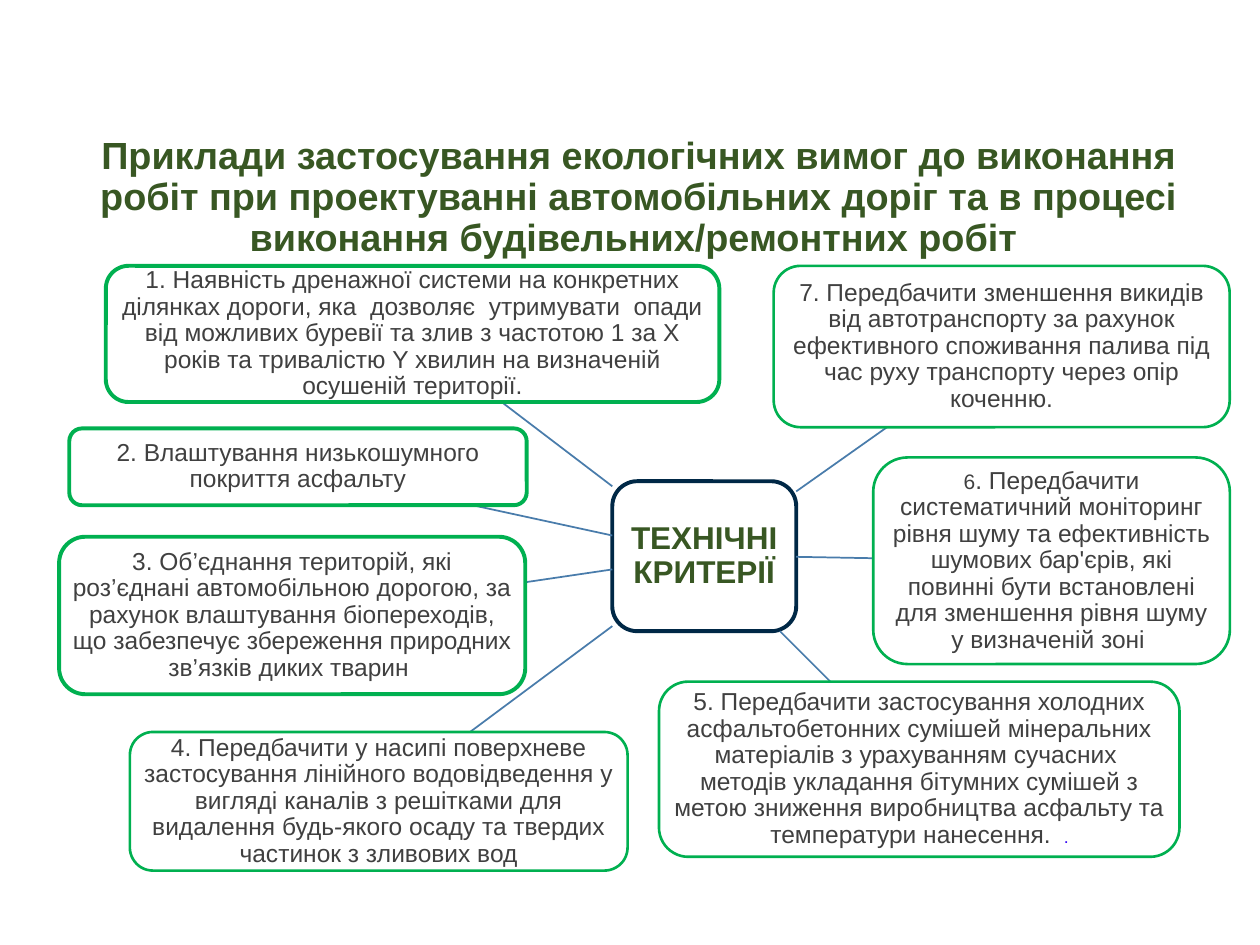
from lxml import etree
from pptx import Presentation
from pptx import util as u
from pptx.dml.color import RGBColor
from pptx.enum import shapes, text
from pptx.oxml.ns import qn

FONT = "Arial"
WHITE = RGBColor(0xFF, 0xFF, 0xFF)
DARK_GREEN = RGBColor(0x38, 0x57, 0x23)
GREEN = RGBColor(0x00, 0xB0, 0x50)
NAVY = RGBColor(0x00, 0x28, 0x46)
BLUE = RGBColor(0x49, 0x7C, 0xAB)
GREY = RGBColor(0x40, 0x40, 0x40)
VIOLET = RGBColor(0x38, 0x0C, 0xF4)

TITLE = ("Приклади застосування екологічних вимог до виконання робіт при "
         "проектуванні автомобільних доріг та в процесі виконання "
         "будівельних/ремонтних робіт ")

# Each criterion: (left, top, width, height), line width, text runs with format
CRITERIA = [
    ((60.5, 151.9, 350.6, 77.8), 2.25, [
        ("1. Наявність дренажної системи на конкретних ділянках дороги, яка  "
         "дозволяє  утримувати  опади від можливих буревії та злив з частотою "
         "1 за X років та тривалістю Y хвилин на визначеній осушеній "
         "території.", {})]),
    ((39.6, 244.8, 261.4, 43.9), 2.25, [
        ("2. Влаштування низькошумного покриття асфальту", {})]),
    ((33.8, 306.7, 266.4, 90), 2.25, [
        ("3. Об’єднання територій, які роз’єднані автомобільною дорогою, за "
         "рахунок влаштування біопереходів, що забезпечує збереження "
         "природних зв’язків диких тварин ", {})]),
    ((74.2, 418.3, 284.4, 79.2), 1.5, [
        ("4. Передбачити у насипі поверхневе застосування лінійного "
         "водовідведення у вигляді каналів з решітками для видалення "
         "будь-якого осаду та твердих частинок з зливових вод", {})]),
    ((376.6, 389.5, 297.4, 100.1), 1.5, [
        ("5. Передбачити застосування холодних асфальтобетонних сумішей "
         "мінеральних матеріалів з урахуванням сучасних  методів укладання "
         "бітумних сумішей з метою зниження виробництва асфальту та "
         "температури нанесення.  ", {}),
        (".", {"size": 7, "color": VIOLET, "bold": True})]),
    ((499, 261.4, 203.8, 118.1), 1.5, [
        ("6", {"size": 12}),
        (". Передбачити систематичний моніторинг рівня шуму та ефективність "
         "шумових бар'єрів, які повинні бути встановлені для зменшення рівня "
         "шуму у визначеній зоні ", {})]),
    ((442.1, 151.9, 260.6, 92.2), 1.5, [
        ("7. Передбачити зменшення викидів від автотранспорту за рахунок "
         "ефективного споживання палива під час руху транспорту через опір "
         "коченню.", {})]),
]

# Spokes from the hub to criteria 1 to 7: x1, y1, x2, y2
SPOKES = [
    (349.9, 277.9, 286.6, 229.7),
    (349.9, 306, 270, 288.7),
    (349.9, 325.4, 301, 332.6),
    (349.9, 357.8, 268.6, 418.3),
    (445.7, 360.7, 474.5, 389.5),
    (455, 318.2, 499, 319),
    (455, 280.8, 506.9, 244.1),
]


def add_run(paragraph, content, size=14, color=GREY, bold=False):
    run = paragraph.add_run()
    run.text = content
    run.font.name = FONT
    run.font.size = u.Pt(size)
    run.font.bold = bold
    run.font.color.rgb = color


def prepare_text(shape, inset_x, inset_y):
    """Set up a wrapped, centred text frame and return its paragraph."""
    frame = shape.text_frame
    frame.word_wrap = True
    frame.vertical_anchor = text.MSO_ANCHOR.MIDDLE
    frame.margin_left = frame.margin_right = u.Pt(inset_x)
    frame.margin_top = frame.margin_bottom = u.Pt(inset_y)
    paragraph = frame.paragraphs[0]
    paragraph.alignment = text.PP_ALIGN.CENTER
    paragraph.line_spacing = 0.9
    return paragraph


def add_title(slide):
    box = slide.shapes.add_textbox(*map(u.Pt, (49.7, 85.7, 630.7, 55.4)))
    add_run(prepare_text(box, 7.2, 3.6), TITLE,
            size=21.6, color=DARK_GREEN, bold=True)


def add_rounded_box(slide, bounds, line_color, line_width, runs, inset=2.8):
    shape = slide.shapes.add_shape(
        shapes.MSO_SHAPE.ROUNDED_RECTANGLE, *map(u.Pt, bounds))
    shape.shadow.inherit = False
    shape.fill.solid()
    shape.fill.fore_color.rgb = WHITE
    shape.line.color.rgb = line_color
    shape.line.width = u.Pt(line_width)
    paragraph = prepare_text(shape, inset, inset)
    for content, style in runs:
        add_run(paragraph, content, **style)


def add_spoke(slide, ends):
    spoke = slide.shapes.add_connector(
        shapes.MSO_CONNECTOR.STRAIGHT, *map(u.Pt, ends))
    spoke.line.color.rgb = BLUE
    spoke.line.width = u.Pt(1)
    etree.SubElement(spoke._element.spPr, qn("a:effectLst"))


def main():
    presentation = Presentation()
    presentation.slide_width = u.Pt(720)
    presentation.slide_height = u.Pt(540)
    slide = presentation.slides.add_slide(presentation.slide_layouts[6])

    add_title(slide)

    # Hub of the diagram
    add_rounded_box(slide, (349.9, 275, 105.1, 85.7), NAVY, 2.25, [
        ("ТЕХНІЧНІ КРИТЕРІЇ",
         {"size": 18, "color": DARK_GREEN, "bold": True})], inset=3.6)

    # Criteria around the hub, each with its spoke
    for (bounds, line_width, runs), ends in zip(CRITERIA, SPOKES):
        add_spoke(slide, ends)
        add_rounded_box(slide, bounds, GREEN, line_width, runs)

    presentation.save("out.pptx")


if __name__ == "__main__":
    main()
